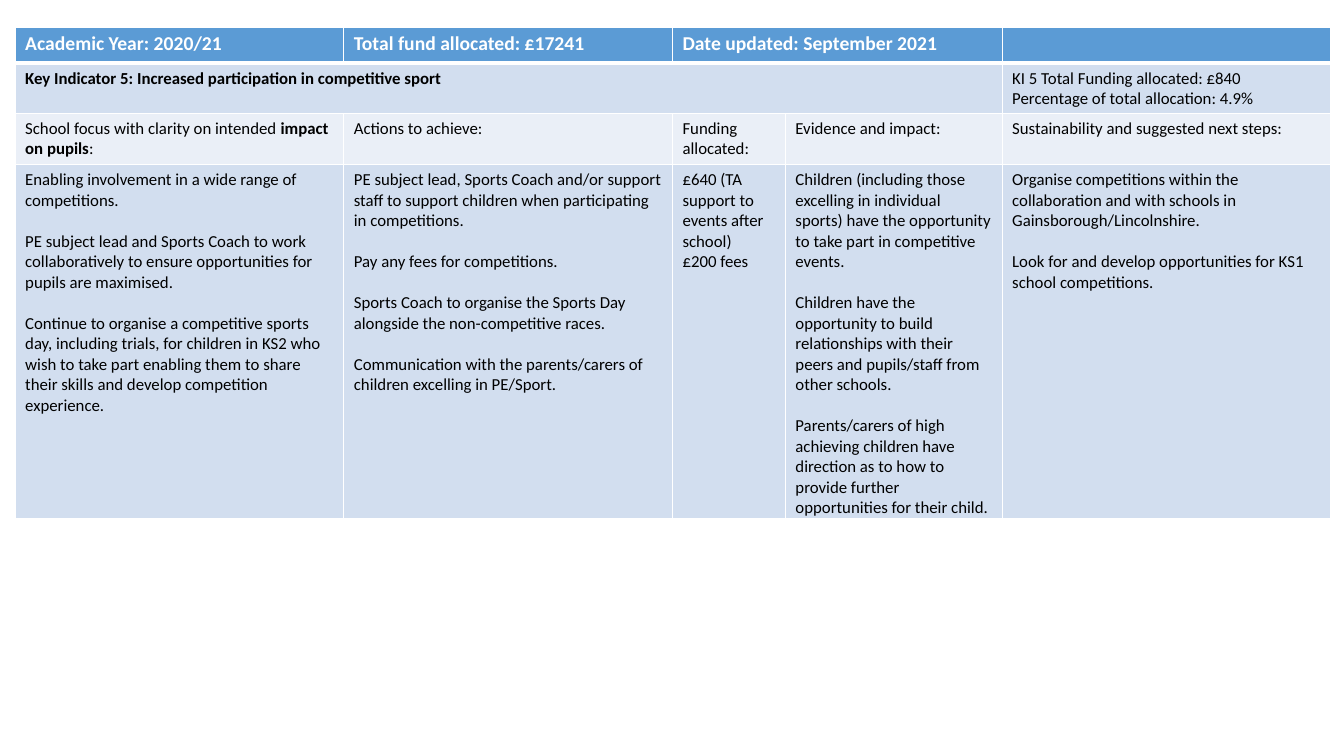
from lxml import etree
from pptx import Presentation
from pptx.dml.color import RGBColor
from pptx.enum.text import MSO_ANCHOR
from pptx.oxml.ns import qn
from pptx.util import Inches, Pt

TOP = MSO_ANCHOR.TOP
WHITE, BLACK = "FFFFFF", "000000"
HEADER, BAND, LIGHT = "5B9BD5", "D2DEEF", "EAEFF7"
LINE_GAP = 14.65  # one line of 12 pt text


def rgb(value):
    return RGBColor.from_string(value)


def add_borders(cell, widths):
    tcPr = cell._tc.get_or_add_tcPr()
    for i, (side, width) in enumerate(widths.items()):
        ln = etree.Element(qn("a:ln" + side), w=str(Pt(width)))
        fill = etree.SubElement(ln, qn("a:solidFill"))
        etree.SubElement(fill, qn("a:srgbClr"), val=WHITE)
        tcPr.insert(i, ln)


prs = Presentation()
prs.slide_width, prs.slide_height = Inches(13.33), Inches(7.5)
s = prs.slides.add_slide(prs.slide_layouts[6])

# Cell paragraphs; ** switches bold on and off
headings = [["**Academic Year: 2020/21"], ["**Total fund allocated: £17241"],
            ["**Date updated: September 2021"], [], []]
indicator = [["**Key Indicator 5: Increased participation in competitive sport"], [], [], [],
             ["KI 5 Total Funding allocated: £840", "Percentage of total allocation: 4.9%"]]
labels = [["School focus with clarity on intended **impact on pupils**:"],
          ["Actions to achieve:"], ["Funding allocated:"], ["Evidence and impact:"],
          ["Sustainability and suggested next steps:"]]
details = [
    ["Enabling involvement in a wide range of competitions.",
     "PE subject lead and Sports Coach to work collaboratively to ensure opportunities for "
     "pupils are maximised.",
     "Continue to organise a competitive sports day, including trials, for children in KS2 who "
     "wish to take part enabling them to share their skills and develop competition experience."],
    ["PE subject lead, Sports Coach and/or support staff to support children when "
     "participating in competitions.",
     "Pay any fees for competitions.",
     "Sports Coach to organise the Sports Day alongside the non-competitive races.",
     "Communication with the parents/carers of children excelling in PE/Sport."],
    ["£640 (TA support to events after school)", "£200 fees"],
    ["Children (including those excelling in individual sports) have the opportunity to take "
     "part in competitive events.",
     "Children have the opportunity to build relationships with their peers and pupils/staff "
     "from other schools.",
     "Parents/carers of high achieving children have direction as to how to provide further "
     "opportunities for their child."],
    ["Organise competitions within the collaboration and with schools in "
     "Gainsborough/Lincolnshire.",
     "Look for and develop opportunities for KS1 school competitions."],
]

# Row height, fill, text colour, size, contents
rows = [(0.33, HEADER, WHITE, 14, headings), (0.5, BAND, BLACK, 12, indicator),
        (0.51, LIGHT, BLACK, 12, labels), (3.49, BAND, BLACK, 12, details)]
col_widths = [3.26, 3.26, 1.12, 2.15, 3.26]

# Table grid
table = s.shapes.add_table(len(rows), len(col_widths), Inches(0.15), Inches(0.27),
                           Inches(13.05), Inches(4.83)).table
for column, width in zip(table.columns, col_widths):
    column.width = Inches(width)
table.cell(0, 2).merge(table.cell(0, 3))
table.cell(1, 0).merge(table.cell(1, 3))

# Cells
for i, (height, fill, color, size, contents) in enumerate(rows):
    table.rows[i].height = Inches(height)
    for j, paragraphs in enumerate(contents):
        cell = table.cell(i, j)
        cell.vertical_anchor = TOP
        cell.margin_bottom = 0
        cell.fill.solid()
        cell.fill.fore_color.rgb = rgb(fill)
        add_borders(cell, {"L": 1, "R": 1, "T": 3 if i == 1 else 1, "B": 3 if i == 0 else 1})
        tf = cell.text_frame
        for n, text in enumerate(paragraphs):
            p = tf.add_paragraph() if n else tf.paragraphs[0]
            if n and contents is details and j != 2:
                p.space_before = Pt(LINE_GAP)
            for k, part in enumerate(text.split("**")):
                if part:
                    r = p.add_run()
                    r.text = part
                    font = {"name": "Calibri", "size": Pt(size), "bold": k % 2 == 1}
                    for name, value in font.items():
                        setattr(r.font, name, value)
                    r.font.color.rgb = rgb(color)

prs.save("out.pptx")
